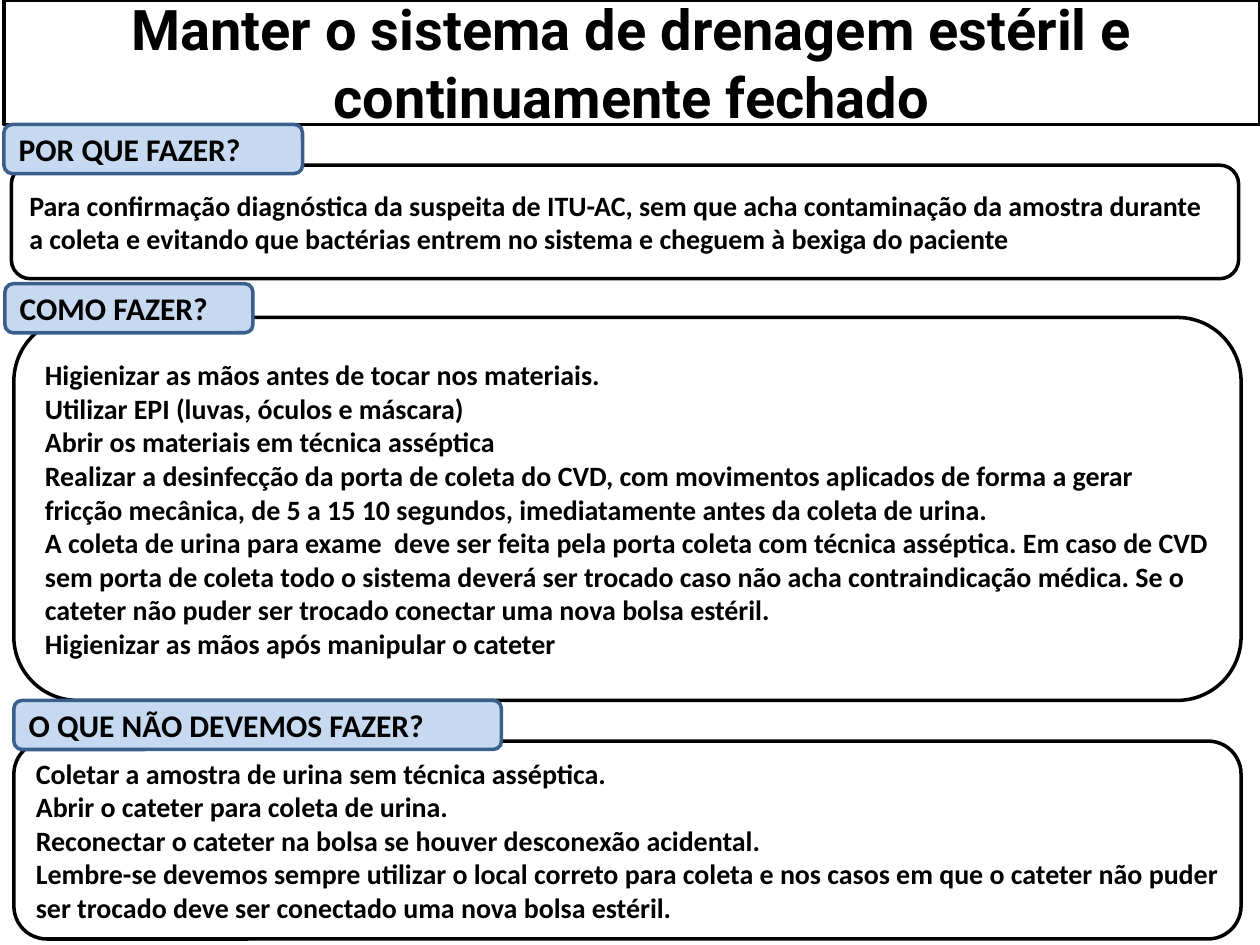
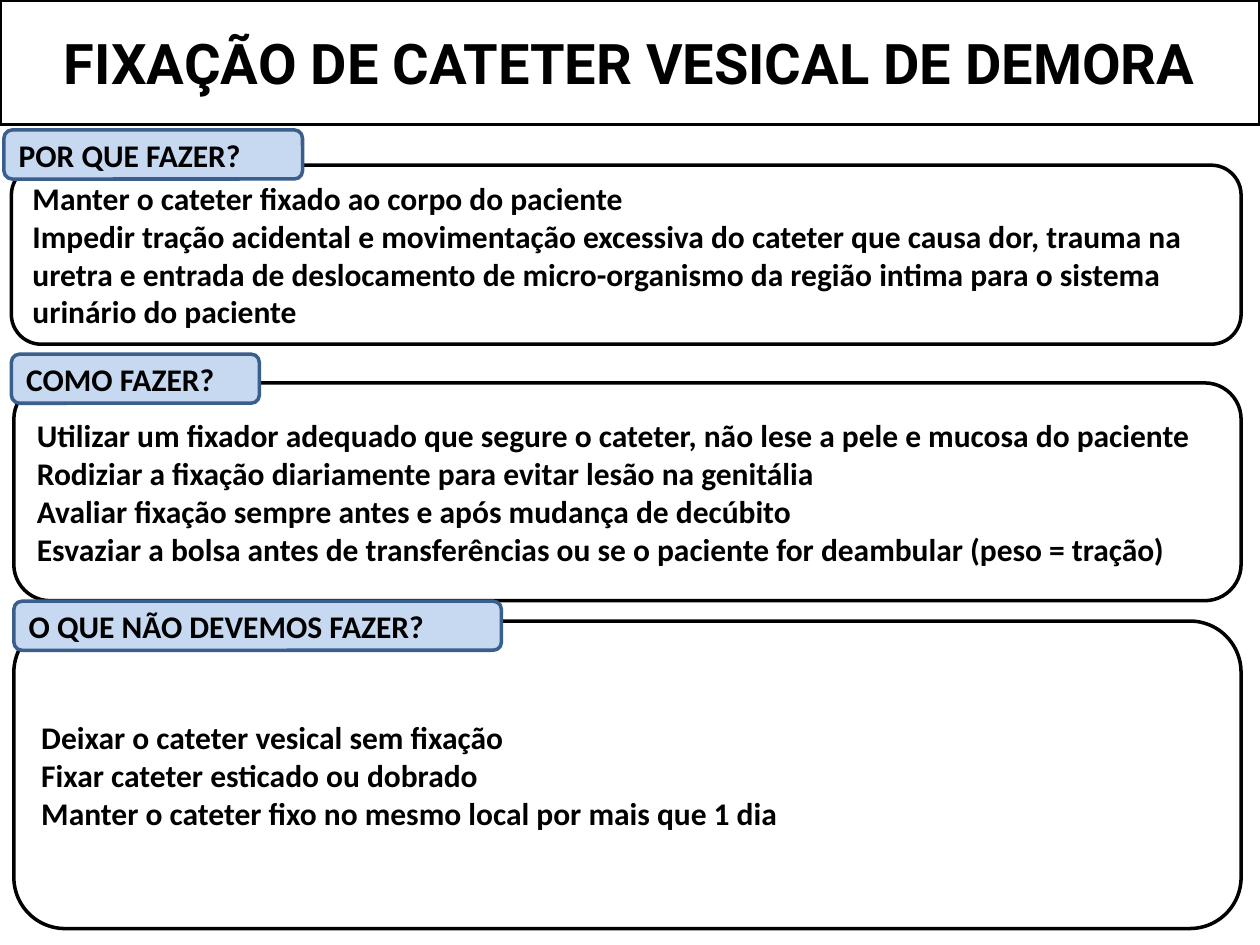
"""Build two slides of urinary catheter care guidance."""
from dataclasses import dataclass

from pptx import Presentation
from pptx.dml.color import RGBColor
from pptx.enum.shapes import MSO_SHAPE
from pptx.enum.text import MSO_ANCHOR, PP_ALIGN
from pptx.util import Cm, Pt


@dataclass(frozen=True)
class Theme:
    ink: str = "000000"
    paper: str = "FFFFFF"
    tab_fill: str = "C6D9F1"
    tab_line: str = "3A5F8C"
    title_font: str = "Roboto"
    body_font: str = "Calibri"
    title_size: int = 32
    tab_size: int = 18
    line_width: int = 2


THEME = Theme()
SLIDE_WIDTH, SLIDE_HEIGHT = 25.4, 19.05
TITLE_HEIGHT, TAB_HEIGHT = 2.51, 0.99
WHY, HOW, AVOID = "POR QUE FAZER?", "COMO FAZER?", "O QUE NÃO DEVEMOS FAZER?"
TAB_WIDTHS = {WHY: 6.02, HOW: 5.0, AVOID: 9.83}

SLIDES = [
    {
        "title": "Manter o sistema de drenagem estéril e continuamente fechado",
        "title_left": 0.08,
        "body_size": 16,
        "sections": [
            {
                "heading": WHY,
                "tab": (0.08, 2.51),
                "panel": (0.23, 3.33, 24.74, 2.29),
                "lines": [
                    "Para confirmação diagnóstica da suspeita de ITU-AC, sem que acha contaminação "
                    "da amostra durante a coleta e evitando que bactérias entrem no sistema e "
                    "cheguem à bexiga do paciente",
                ],
            },
            {
                "heading": HOW,
                "tab": (0.1, 5.72),
                "panel": (0.28, 6.4, 24.74, 7.72),
                "lines": [
                    "Higienizar as mãos antes de tocar nos materiais.",
                    "Utilizar EPI (luvas, óculos e máscara)",
                    "Abrir os materiais em técnica asséptica",
                    "Realizar a desinfecção da porta de coleta do CVD, com movimentos aplicados de "
                    "forma a gerar fricção mecânica, de 5 a 15 10 segundos, imediatamente antes da "
                    "coleta de urina.",
                    "A coleta de urina para exame  deve ser feita pela porta coleta com técnica "
                    "asséptica. Em caso de CVD sem porta de coleta todo o sistema deverá ser "
                    "trocado caso não acha contraindicação médica. Se o cateter não puder ser "
                    "trocado conectar uma nova bolsa estéril.",
                    "Higienizar as mãos após manipular o cateter",
                ],
            },
            {
                "heading": AVOID,
                "tab": (0.28, 14.12),
                "panel": (0.28, 14.94, 24.74, 3.99),
                "lines": [
                    "Coletar a amostra de urina sem técnica asséptica.",
                    "Abrir o cateter para coleta de urina.",
                    "Reconectar o cateter na bolsa se houver desconexão acidental.",
                    "Lembre-se devemos sempre utilizar o local correto para coleta e nos casos em "
                    "que o cateter não puder ser trocado deve ser conectado uma nova bolsa estéril.",
                ],
            },
        ],
    },
    {
        "title": "FIXAÇÃO DE CATETER VESICAL DE DEMORA",
        "title_left": 0,
        "body_size": 18,
        "sections": [
            {
                "heading": WHY,
                "tab": (0.08, 2.62),
                "panel": (0.23, 3.33, 24.79, 3.61),
                "lines": [
                    "Manter o cateter fixado ao corpo do paciente",
                    "Impedir tração acidental e movimentação excessiva do cateter que causa dor, "
                    "trauma na uretra e entrada de deslocamento de micro-organismo da região "
                    "intima para o sistema urinário do paciente",
                ],
            },
            {
                "heading": HOW,
                "tab": (0.23, 7.14),
                "panel": (0.28, 7.72, 24.74, 4.39),
                "lines": [
                    "Utilizar um fixador adequado que segure o cateter, não lese a pele e mucosa "
                    "do paciente",
                    "Rodiziar a fixação diariamente para evitar lesão na genitália",
                    "Avaliar fixação sempre antes e após mudança de decúbito",
                    "Esvaziar a bolsa antes de transferências ou se o paciente for deambular "
                    "(peso = tração)",
                ],
            },
            {
                "heading": AVOID,
                "tab": (0.28, 12.12),
                "panel": (0.28, 12.52, 24.74, 6.2),
                "lines": [
                    "Deixar o cateter vesical sem fixação",
                    "Fixar cateter esticado ou dobrado",
                    "Manter o cateter fixo no mesmo local por mais que 1 dia",
                ],
            },
        ],
    },
]


def add_box(slide, box, lines, size, preset=MSO_SHAPE.ROUNDED_RECTANGLE, fill=THEME.paper,
            line=THEME.ink, font=THEME.body_font, alignment=PP_ALIGN.LEFT):
    shape = slide.shapes.add_shape(preset, *(Cm(length) for length in box))
    shape.shadow.inherit = False
    shape.fill.solid()
    shape.fill.fore_color.rgb = RGBColor.from_string(fill)
    shape.line.color.rgb = RGBColor.from_string(line)
    shape.line.width = Pt(THEME.line_width)
    frame = shape.text_frame
    frame.word_wrap = True
    frame.vertical_anchor = MSO_ANCHOR.MIDDLE
    for index, text in enumerate(lines):
        paragraph = frame.add_paragraph() if index else frame.paragraphs[0]
        paragraph.alignment = alignment
        run = paragraph.add_run()
        run.text = text
        run.font.name = font
        run.font.size = Pt(size)
        run.font.bold = True
        run.font.color.rgb = RGBColor.from_string(THEME.ink)


def add_title(slide, text, left):
    add_box(slide, (left, 0, SLIDE_WIDTH - left, TITLE_HEIGHT), [text], THEME.title_size,
            preset=MSO_SHAPE.RECTANGLE, font=THEME.title_font, alignment=PP_ALIGN.CENTER)


def add_section(slide, section, body_size):
    heading = section["heading"]
    add_box(slide, section["panel"], section["lines"], body_size)
    add_box(slide, (*section["tab"], TAB_WIDTHS[heading], TAB_HEIGHT), [heading],
            THEME.tab_size, fill=THEME.tab_fill, line=THEME.tab_line)


def main():
    presentation = Presentation()
    presentation.slide_width = Cm(SLIDE_WIDTH)
    presentation.slide_height = Cm(SLIDE_HEIGHT)
    for content in SLIDES:
        slide = presentation.slides.add_slide(presentation.slide_layouts[6])
        add_title(slide, content["title"], content["title_left"])
        for section in content["sections"]:
            add_section(slide, section, content["body_size"])
    presentation.save("out.pptx")


if __name__ == "__main__":
    main()
